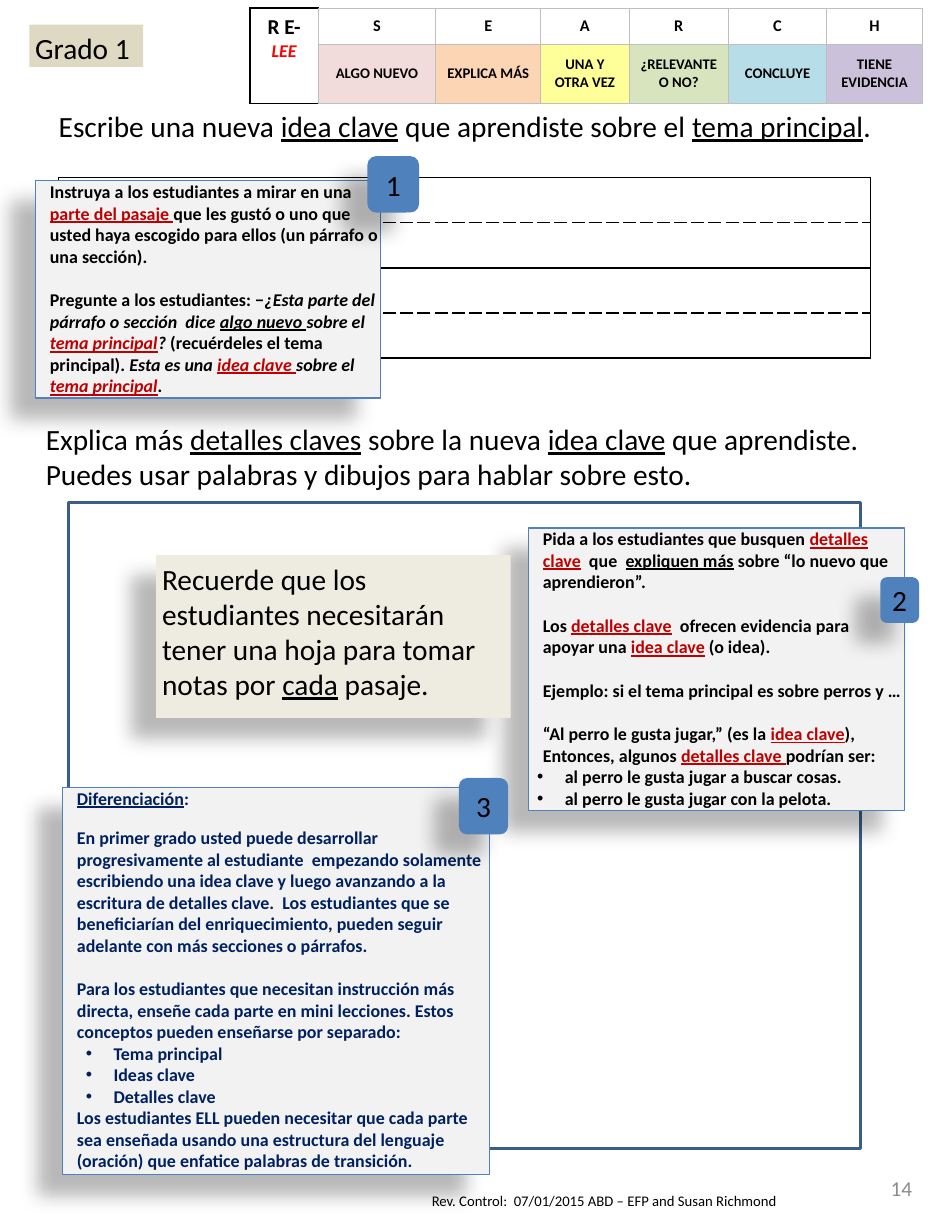
import lxml.etree
import pptx
import pptx.dml.color
import pptx.enum.shapes
import pptx.enum.text
import pptx.oxml.ns
import pptx.util

Pt = pptx.util.Pt
RGBColor = pptx.dml.color.RGBColor
Shape = pptx.enum.shapes.MSO_SHAPE
Align = pptx.enum.text.PP_ALIGN
Anchor = pptx.enum.text.MSO_ANCHOR
qn = pptx.oxml.ns.qn

BLACK = RGBColor(0x00, 0x00, 0x00)
WHITE = RGBColor(0xFF, 0xFF, 0xFF)
RED = RGBColor(0xFF, 0x00, 0x00)
DARK_RED = RGBColor(0xC0, 0x00, 0x00)
NAVY = RGBColor(0x00, 0x20, 0x60)
BLUE = RGBColor(0x4F, 0x81, 0xBD)
FRAME_BLUE = RGBColor(0x3A, 0x5E, 0x8A)
NOTE_GREY = RGBColor(0xF2, 0xF2, 0xF2)
NUMBER_GREY = RGBColor(0x8C, 0x8C, 0x8C)
GRID_GREY = RGBColor(0xBF, 0xBF, 0xBF)
TAN = RGBColor(0xDD, 0xD9, 0xC3)
CREAM = RGBColor(0xEE, 0xEC, 0xE1)

GAP = 13.4  # one line of 11 pt text
INDENT = 9
INSET = 3.6

SEARCH = [
    ("S", "ALGO NUEVO", 72, RGBColor(0xF2, 0xDC, 0xDB)),
    ("E", "EXPLICA MÁS", 64.6, RGBColor(0xFC, 0xD5, 0xB5)),
    ("A", "UNA Y OTRA VEZ", 54, RGBColor(0xFF, 0xFF, 0x99)),
    ("R", "¿RELEVANTE O NO?", 61.2, RGBColor(0xD7, 0xE4, 0xBD)),
    ("C", "CONCLUYE", 60, RGBColor(0xB7, 0xDE, 0xE8)),
    ("H", "TIENE EVIDENCIA", 59, RGBColor(0xCC, 0xC1, 0xDA)),
]


def para(*runs, before=0, margin=0, bullet=False, align=Align.LEFT):
    """Describe a paragraph; a run is (text, flags), flags from b, i, u and k (key term)."""
    return dict(runs=runs, before=before, margin=margin, bullet=bullet, align=align)


def note(*runs, before=0):
    return para(*runs, before=before, margin=INDENT)


def item(text, margin):
    return para((text, "b"), margin=margin, bullet=True)


class Sheet:
    font = "Calibri"

    def __init__(self, slide):
        self.slide = slide

    def set_text(self, frame, paragraphs, size, color=BLACK, inset=INSET, anchor=Anchor.TOP):
        frame.word_wrap = True
        frame.vertical_anchor = anchor
        frame.margin_left = frame.margin_right = Pt(inset)
        frame.margin_top = frame.margin_bottom = Pt(inset)
        self.fill_text(frame, paragraphs, size, color)

    def fill_text(self, frame, paragraphs, size, color=BLACK):
        for index, content in enumerate(paragraphs):
            line = frame.add_paragraph() if index else frame.paragraphs[0]
            line.alignment = content["align"]
            line.space_before = Pt(content["before"])
            props = line._p.get_or_add_pPr()
            props.set("marL", str(Pt(content["margin"])))
            props.set("indent", str(Pt(-17 if content["bullet"] else 0)))
            if content["bullet"]:
                lxml.etree.SubElement(props, qn("a:buFont")).set("typeface", "Arial")
                lxml.etree.SubElement(props, qn("a:buChar")).set("char", "•")
            for text, flags in content["runs"]:
                self.add_run(line, text, flags, size, DARK_RED if "k" in flags else color)

    def add_run(self, line, text, flags, size, color):
        run = line.add_run()
        run.text = text
        run.font.name = self.font
        run.font.size = Pt(size)
        run.font.bold = "b" in flags
        run.font.italic = "i" in flags
        run.font.underline = "u" in flags or "k" in flags
        run.font.color.rgb = color

    def title(self, box, paragraph, size):
        heading = self.slide.shapes.title
        heading.left, heading.top, heading.width, heading.height = map(Pt, box)
        heading.text_frame.auto_size = pptx.enum.text.MSO_AUTO_SIZE.NONE
        self.set_text(heading.text_frame, [paragraph], size)

    def text(self, box, paragraphs, size, **style):
        label = self.slide.shapes.add_textbox(*map(Pt, box))
        self.set_text(label.text_frame, paragraphs, size, **style)

    def shape(self, box, kind=Shape.RECTANGLE, fill=None, line=None, width=0.75, shadow=False):
        panel = self.slide.shapes.add_shape(kind, *map(Pt, box))
        if fill is None:
            panel.fill.background()
        else:
            panel.fill.solid()
            panel.fill.fore_color.rgb = fill
        if line is None:
            panel.line.fill.background()
        else:
            panel.line.color.rgb = line
            panel.line.width = Pt(width)
        panel.shadow.inherit = False
        if shadow:
            effects = panel._element.spPr.find(qn("a:effectLst"))
            outer = lxml.etree.SubElement(
                effects, qn("a:outerShdw"), blurRad=str(Pt(12)), dist=str(Pt(19.7)),
                dir=str(141 * 60000), algn="ctr", rotWithShape="0")
            tone = lxml.etree.SubElement(outer, qn("a:srgbClr"), val=str(BLACK))
            lxml.etree.SubElement(tone, qn("a:alpha"), val="28000")
        return panel

    def note_box(self, box, paragraphs, color=BLACK):
        panel = self.shape(box, fill=NOTE_GREY, line=BLUE, shadow=True)
        self.set_text(panel.text_frame, paragraphs, 11, color=color, inset=0)

    def badge(self, box, number):
        panel = self.shape(box, Shape.ROUNDED_RECTANGLE, BLUE, shadow=True)
        self.set_text(panel.text_frame, [para((number, ""), align=Align.CENTER)], 18,
                      inset=0, anchor=Anchor.MIDDLE)

    def table(self, box, widths, heights):
        grid = self.slide.shapes.add_table(len(heights), len(widths), *map(Pt, box)).table
        grid.first_row = grid.horz_banding = False
        for column, width in zip(grid.columns, widths):
            column.width = Pt(width)
        for row, height in zip(grid.rows, heights):
            row.height = Pt(height)
        return grid

    def cell(self, cell, fill, borders, inset=INSET, anchor=Anchor.MIDDLE):
        """Style a cell; borders holds (color, width, dash) for left, right, top, bottom."""
        cell.margin_left = cell.margin_right = Pt(inset)
        cell.margin_top = cell.margin_bottom = Pt(inset)
        cell.vertical_anchor = anchor
        props = cell._tc.get_or_add_tcPr()
        for side, (color, width, dash) in zip("LRTB", borders):
            edge = lxml.etree.SubElement(props, qn("a:ln" + side), w=str(Pt(width)))
            paint = lxml.etree.SubElement(edge, qn("a:solidFill"))
            lxml.etree.SubElement(paint, qn("a:srgbClr"), val=str(color))
            lxml.etree.SubElement(edge, qn("a:prstDash"), val=dash)
        cell.fill.solid()
        cell.fill.fore_color.rgb = fill


def add_writing_lines(sheet):
    solid, dashed = (BLACK, 1, "solid"), (BLACK, 1, "sysDash")
    lines = sheet.table((36, 109, 498, 110.8), [498], [27.7] * 4)
    for row in range(4):
        edges = (solid, dashed) if row % 2 == 0 else (dashed, solid)
        sheet.cell(lines.cell(row, 0), WHITE, (solid, solid) + edges, inset=0)


def add_search_table(sheet):
    grey, black = (GRID_GREY, 0.5, "solid"), (BLACK, 1, "solid")
    widths = [41.8] + [width for _, _, width, _ in SEARCH]
    search = sheet.table((153.4, 5, sum(widths), 56.2), widths, [22.3, 33.9])
    reread = search.cell(0, 0)
    reread.merge(search.cell(1, 0))
    for row in range(2):
        sheet.cell(search.cell(row, 0), WHITE, (black, grey, black, black), anchor=Anchor.TOP)
    sheet.fill_text(reread.text_frame, [para(("R E-", "b"), align=Align.CENTER)], 13)
    lee = reread.text_frame.add_paragraph()
    lee.alignment = Align.CENTER
    sheet.add_run(lee, "LEE", "bi", 11, RED)
    for column, (letter, meaning, _, tint) in enumerate(SEARCH, 1):
        for row, (text, size, fill) in enumerate([(letter, 10, WHITE), (meaning, 9, tint)]):
            cell = search.cell(row, column)
            sheet.cell(cell, fill, [grey] * 4)
            sheet.fill_text(cell.text_frame, [para((text, "b"), align=Align.CENTER)], size)


def main():
    deck = pptx.Presentation()
    deck.slide_width, deck.slide_height = Pt(576), Pt(756)
    sheet = Sheet(deck.slides.add_slide(deck.slide_layouts[5]))

    sheet.text((257.8, 725.8, 288, 18), [
        para(("Rev. Control:  07/01/2015 ABD – EFP and Susan Richmond", ""))], 9, inset=INSET * 2)
    sheet.title((32.4, 62.6, 537, 30.2), para(
        ("Escribe una nueva ", ""), ("idea clave", "u"),
        (" que aprendiste sobre el ", ""), ("tema principal", "u"), (".", "")), 18)
    add_writing_lines(sheet)
    sheet.shape((41.8, 308.2, 486, 396.7), line=FRAME_BLUE, width=2)

    sheet.note_box((21.6, 111, 211.7, 133.2), [
        note(("Instruya a los estudiantes a mirar en una ", "b"), ("parte del pasaje ", "bk"),
             ("que les gustó o uno que usted haya escogido para ellos "
              "(un párrafo o una sección).", "b")),
        note(("Pregunte a los estudiantes: −", "b"),
             ("¿Esta parte del párrafo o sección  dice ", "bi"), ("algo nuevo ", "biu"),
             ("sobre el ", "bi"), ("tema principal", "bik"), ("? ", "bi"),
             ("(recuérdeles el tema principal). ", "b"), ("Esta es una ", "bi"),
             ("idea clave ", "bik"), ("sobre el ", "bi"), ("tema principal", "bik"),
             (".", "bi"), before=GAP)])
    sheet.note_box((324, 324, 231.1, 173.5), [
        note(("Pida a los estudiantes que busquen ", "b"), ("detalles clave", "bk"),
             ("  que  ", "b"), ("expliquen más", "bu"),
             (" sobre “lo nuevo que aprendieron”.", "b")),
        note(("Los ", "b"), ("detalles clave", "bk"),
             ("  ofrecen evidencia para apoyar una ", "b"), ("idea clave", "bk"),
             (" (o idea).", "b"), before=GAP),
        note(("Ejemplo: si el tema principal es sobre perros y …", "b"), before=GAP),
        note(("“Al perro le gusta jugar,” (es la ", "b"), ("idea clave", "bk"), ("),", "b"),
             before=GAP),
        note(("Entonces, algunos ", "b"), ("detalles clave ", "bk"), ("podrían ser:", "b")),
        item("al perro le gusta jugar a buscar cosas.", 22.5),
        item("al perro le gusta jugar con la pelota.", 22.5)])
    sheet.badge((225.4, 95.8, 31.7, 34.6), "1")
    sheet.badge((540, 354.2, 23.8, 28.1), "2")

    grade = sheet.shape((18, 15.1, 69.8, 26), fill=TAN)
    sheet.set_text(grade.text_frame, [para(("Grado 1", ""))], 18)
    sheet.text((24.5, 254.9, 527, 54), [para(
        ("Explica más ", ""), ("detalles claves", "u"), (" sobre la nueva ", ""),
        ("idea clave", "u"),
        (" que aprendiste. Puedes usar palabras y dibujos para hablar sobre esto.", ""))], 18)

    sheet.note_box((38.2, 483.1, 262.1, 237.6), [
        note(("Diferenciación", "bu"), (":", "b")),
        note(("En primer grado usted puede desarrollar progresivamente al estudiante  "
              "empezando solamente escribiendo una idea clave y luego avanzando a la escritura "
              "de detalles clave.  Los estudiantes que se beneficiarían del enriquecimiento, "
              "pueden seguir adelante con más secciones o párrafos.", "b"), before=11),
        note(("Para los estudiantes que necesitan instrucción más directa, enseñe cada parte "
              "en mini lecciones. Estos conceptos pueden enseñarse por separado:", "b"),
             before=GAP),
        *[item(topic, 31.5) for topic in ("Tema principal", "Ideas clave", "Detalles clave")],
        note(("Los estudiantes ELL pueden necesitar que cada parte sea enseñada usando una "
              "estructura del lenguaje (oración) que enfatice palabras de transición.", "b")),
    ], color=NAVY)
    sheet.badge((281.5, 477.4, 30.2, 34.6), "3")

    reminder = sheet.shape((95.8, 340.6, 217.4, 100), fill=CREAM, shadow=True)
    sheet.set_text(reminder.text_frame, [para(
        ("Recuerde que los estudiantes necesitarán tener una hoja para tomar notas por ", ""),
        ("cada", "u"), (" pasaje.", ""))], 18)
    add_search_table(sheet)
    sheet.text((504, 714.2, 62.6, 30.2), [para(("14", ""), align=Align.RIGHT)], 13,
               color=NUMBER_GREY, inset=7.2, anchor=Anchor.MIDDLE)
    deck.save("out.pptx")


if __name__ == "__main__":
    main()
